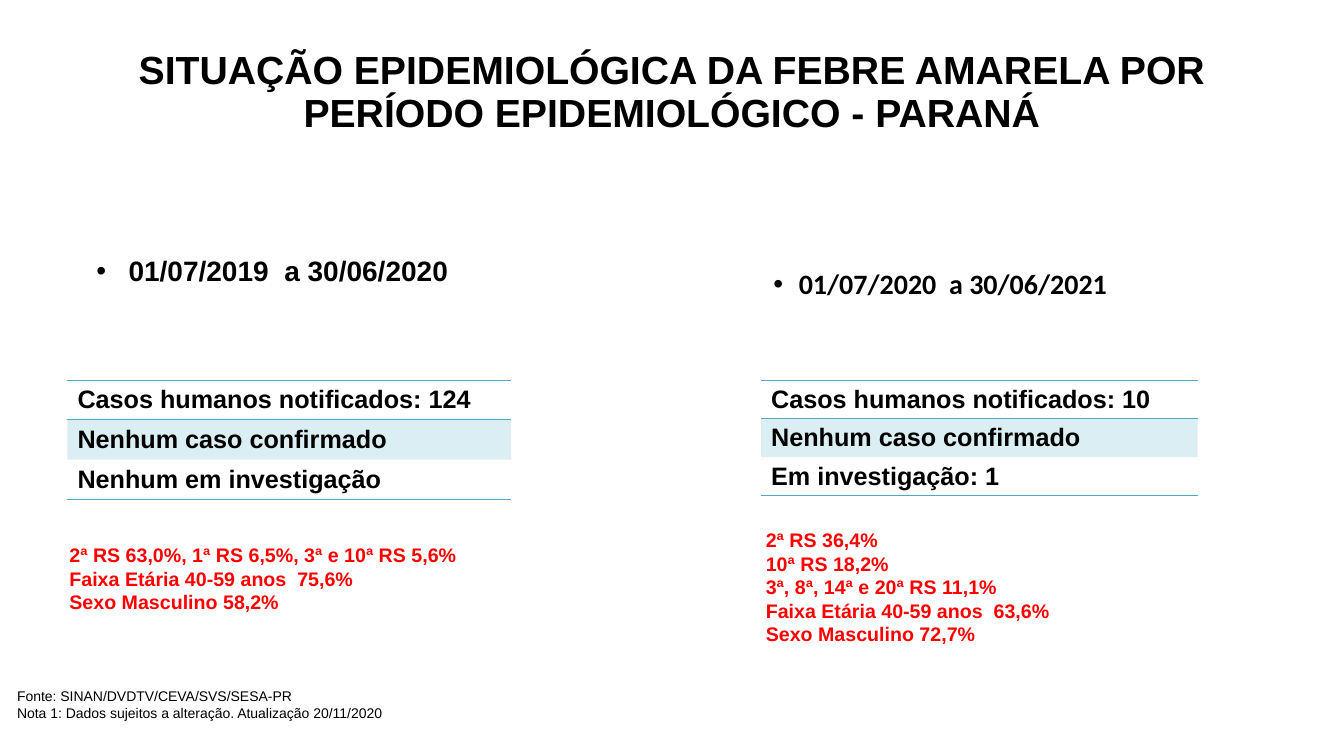
from lxml import etree
from pptx import Presentation
from pptx.dml.color import RGBColor
from pptx.enum.text import MSO_ANCHOR as ANCHOR, PP_ALIGN as ALIGN
from pptx.oxml.ns import qn
from pptx.util import Cm, Pt

BLACK = RGBColor(0x00, 0x00, 0x00)
RED = RGBColor(0xFF, 0x00, 0x00)
TEAL = RGBColor(0x4B, 0xAC, 0xC6)
EDGE_LINES = [True, True, False, True]


def add_text(s, box, lines, size, color=BLACK, bold=True, font="Arial", inset=True):
    sp = s.shapes.add_textbox(*[Cm(v) for v in box])
    tf = sp.text_frame
    tf.word_wrap = True
    if not inset:
        tf.margin_left = tf.margin_right = tf.margin_top = tf.margin_bottom = 0
    tf.text = "\n".join(lines)
    for p in tf.paragraphs:
        for r in p.runs:
            r.font.size, r.font.bold, r.font.name = Pt(size), bold, font
            r.font.color.rgb = color
    return tf


def add_border(tcPr, tag, visible):
    ln = etree.SubElement(tcPr, qn(tag), w=str(Pt(1)))
    if visible:
        fill = etree.SubElement(ln, qn("a:solidFill"))
        etree.SubElement(fill, qn("a:srgbClr"), val=str(TEAL))
    else:
        etree.SubElement(ln, qn("a:noFill"))


prs = Presentation()
prs.slide_width, prs.slide_height = Cm(33.87), Cm(19.05)
s = prs.slides.add_slide(prs.slide_layouts[6])

tf = add_text(s, (1.69, 0.76, 30.48, 3.18),
              ["SITUAÇÃO EPIDEMIOLÓGICA DA FEBRE AMARELA POR PERÍODO EPIDEMIOLÓGICO - PARANÁ"],
              28, inset=False)
tf.vertical_anchor = ANCHOR.MIDDLE
tf.paragraphs[0].alignment = ALIGN.CENTER
tf.paragraphs[0].line_spacing = 0.9

periods = [
    ((0.91, 6.48, 11.91, 6.43), "01/07/2019  a 30/06/2020", "Arial", 0.81),
    ((16.26, 6.81, 14.88, 5.82), "01/07/2020  a 30/06/2021", "Calibri", 0.64),
]
for box, period, font, indent in periods:
    p = add_text(s, box, [period], 20, font=font, inset=False).paragraphs[0]
    pPr = p._p.get_or_add_pPr()
    pPr.set("marL", str(Cm(indent)))
    pPr.set("indent", str(-Cm(indent)))
    etree.SubElement(pPr, qn("a:buFont"), typeface="Arial")
    etree.SubElement(pPr, qn("a:buChar"), char="•")
    p.alignment = ALIGN.CENTER
    p.line_spacing = 0.9

tables = [
    (1.7, 11.18, 1.0, ["Casos humanos notificados: 124", "Nenhum caso confirmado",
                       "Nenhum em investigação"]),
    (19.18, 11.0, 0.97, ["Casos humanos notificados: 10", "Nenhum caso confirmado",
                         "Em investigação: 1"]),
]
for left, width, row_height, rows in tables:
    gf = s.shapes.add_table(len(rows), 1, Cm(left), Cm(9.58), Cm(width),
                            Cm(row_height * len(rows)))
    table = gf.table
    table.first_row = table.horz_banding = False
    for i, label in enumerate(rows):
        table.rows[i].height = Cm(row_height)
        cell = table.cell(i, 0)
        cell.text = label
        cell.margin_top = cell.margin_bottom = Cm(0.1)
        cell.vertical_anchor = ANCHOR.MIDDLE
        r = cell.text_frame.paragraphs[0].runs[0]
        r.font.size, r.font.bold, r.font.name = Pt(18), True, "Arial"
        r.font.color.rgb = BLACK
        tcPr = cell._tc.get_or_add_tcPr()
        add_border(tcPr, "a:lnL", False)
        add_border(tcPr, "a:lnR", False)
        add_border(tcPr, "a:lnT", EDGE_LINES[i])
        add_border(tcPr, "a:lnB", EDGE_LINES[i + 1])
        if i == 1:
            cell.fill.solid()
            cell.fill.fore_color.rgb = TEAL
            color = tcPr.find(qn("a:solidFill")).find(qn("a:srgbClr"))
            etree.SubElement(color, qn("a:alpha"), val="20000")
        else:
            cell.fill.background()

add_text(s, (1.5, 13.56, 11.89, 2.64),
         ["2ª RS 63,0%, 1ª RS 6,5%, 3ª e 10ª RS 5,6%", "Faixa Etária 40-59 anos  75,6%",
          "Sexo Masculino 58,2%"], 14, RED)
add_text(s, (19.05, 13.18, 8.43, 3.84),
         ["2ª RS 36,4%", "10ª RS 18,2%", "3ª, 8ª, 14ª e 20ª RS 11,1%",
          "Faixa Etária 40-59 anos  63,6%", "Sexo Masculino 72,7%"], 14, RED)
add_text(s, (0.18, 17.2, 16.94, 1.12),
         ["Fonte: SINAN/DVDTV/CEVA/SVS/SESA-PR",
          "Nota 1: Dados sujeitos a alteração. Atualização 20/11/2020"], 10, bold=False)

prs.save("out.pptx")
